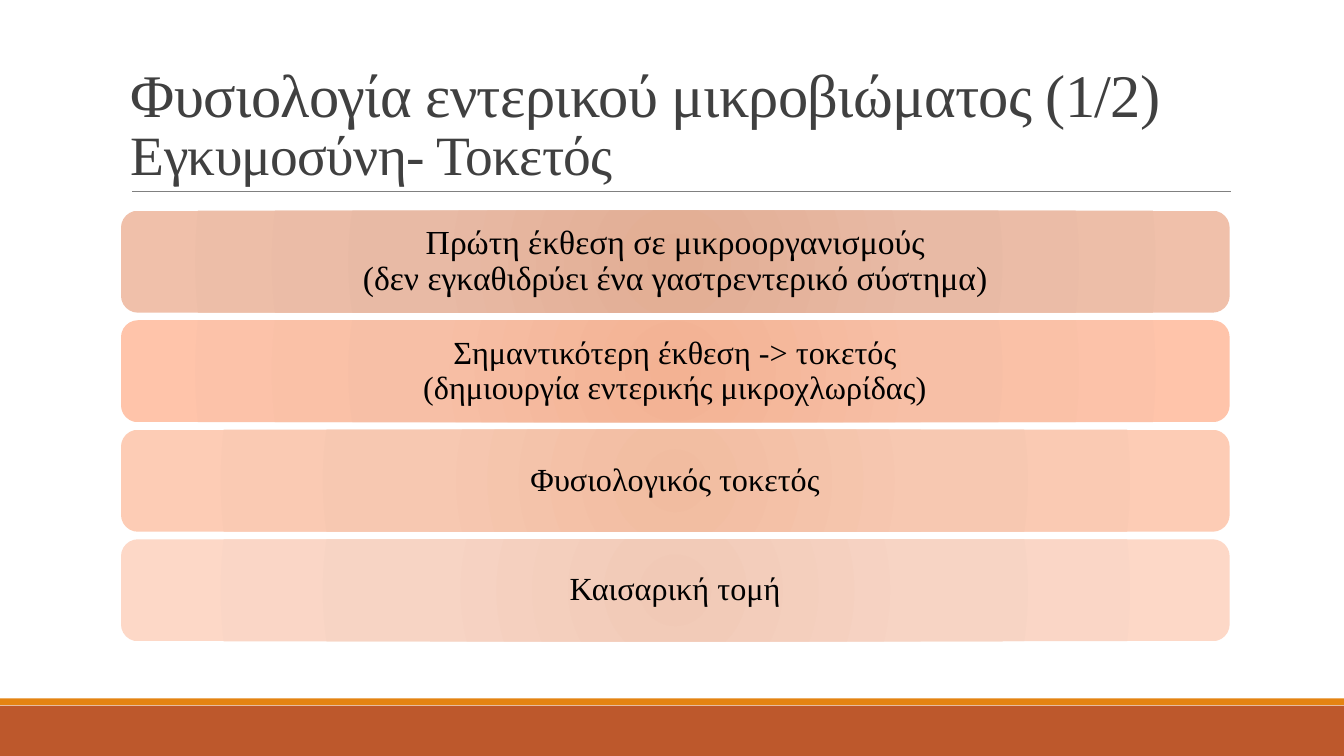
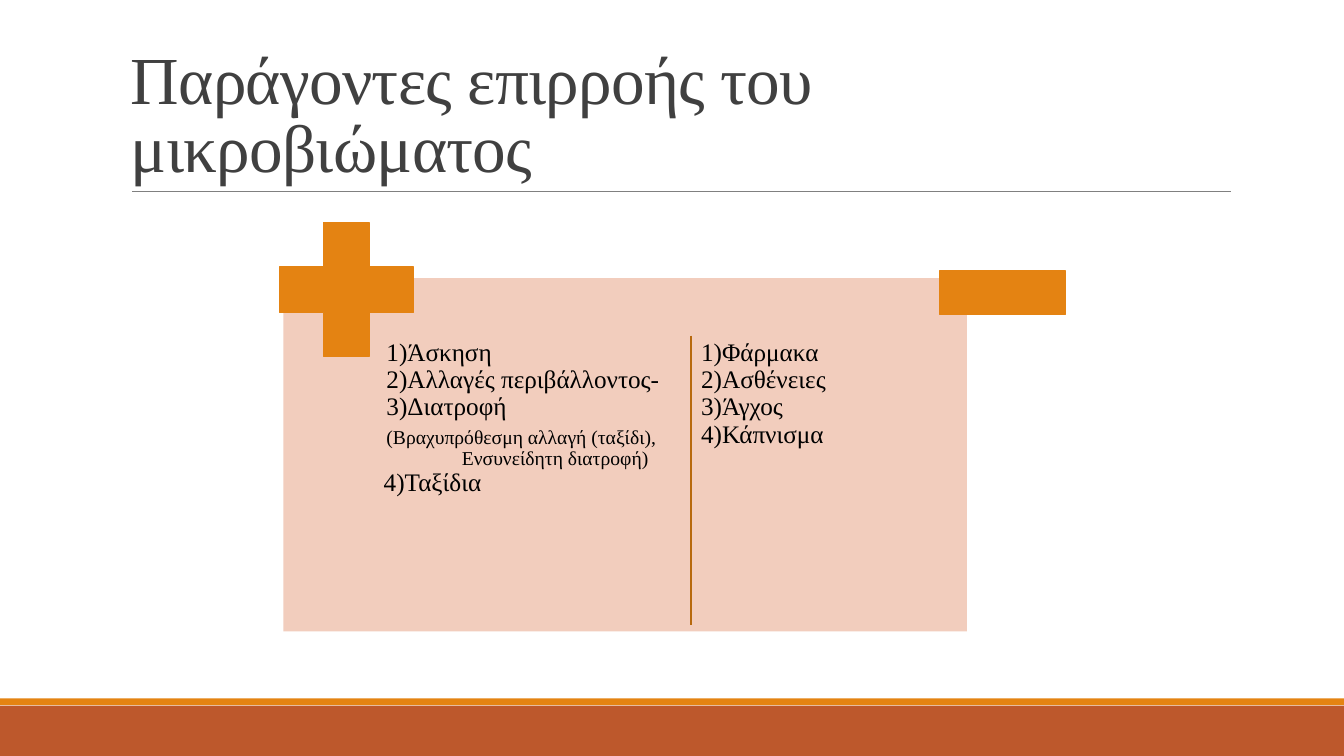
from pptx import Presentation
from pptx.dml.color import RGBColor
from pptx.enum import shapes, text
from pptx.oxml import parse_xml
from pptx.oxml.ns import nsdecls, qn
from pptx.util import Cm, Pt

FONT = "Times New Roman"
BLACK = RGBColor(0x00, 0x00, 0x00)
TITLE_GREY = RGBColor(0x40, 0x40, 0x40)
RULE_GREY = RGBColor(0x80, 0x80, 0x80)
RUST = RGBColor(0xBD, 0x58, 0x2C)
ORANGE = RGBColor(0xE4, 0x83, 0x12)
DARK_ORANGE = RGBColor(0xB7, 0x69, 0x0E)
PEACH = RGBColor(0xF2, 0xCD, 0xBD)

SLIDE_W, SLIDE_H = 33.87, 19.05

# A line of text is (wording, size, left indent in cm, space before in points).
BIRTH_TITLE = [
    ("Φυσιολογία εντερικού μικροβιώματος (1/2)", 43.2, 0, 0),
    ("Εγκυμοσύνη- Τοκετός", 39.6, 0, 0),
]
# Each bar: lines, text size, gradient colours from the centre outwards.
BIRTH_BARS = [
    (["Πρώτη έκθεση σε μικροοργανισμούς",
      "(δεν εγκαθιδρύει ένα γαστρεντερικό σύστημα)"], 24,
     ("E2AD93", "E8BAA5", "F0C0AA")),
    (["Σημαντικότερη έκθεση -> τοκετός",
      "(δημιουργία εντερικής μικροχλωρίδας)"], 23,
     ("F3B293", "F7BFA6", "FFC4AA")),
    (["Φυσιολογικός τοκετός"], 23, ("F1BCA0", "F7C8B1", "FDCCB5")),
    (["Καισαρική τομή"], 23, ("F1C9B6", "F7D4C4", "FDD8C7")),
]

FACTORS_TITLE = [("Παράγοντες επιρροής του μικροβιώματος", 48, 0, 0)]
POSITIVE_FACTORS = [
    ("1)Άσκηση", 18, 0.32, 0),
    ("2)Αλλαγές περιβάλλοντος-", 18, 0.32, 0),
    ("3)Διατροφή", 18, 0.32, 0),
    ("(Βραχυπρόθεσμη αλλαγή (ταξίδι),", 14, 0.32, 4.5),
    ("Ενσυνείδητη διατροφή)", 14, 2.22, 0),
    ("4)Ταξίδια", 18, 0.25, 0),
]
NEGATIVE_FACTORS = [
    (factor, 18, 0.32, 0)
    for factor in ("1)Φάρμακα", "2)Ασθένειες", "3)Άγχος", "4)Κάπνισμα")
]


def write_text(shape, lines, *, color=BLACK, align=text.PP_ALIGN.LEFT,
               anchor=text.MSO_ANCHOR.TOP, inset=(0.1, 0.1),
               line_spacing=0.9, tracking=0):
    """Fill a shape with lines; inset is (sides, top and bottom) in cm."""
    frame = shape.text_frame
    frame.word_wrap = True
    frame.vertical_anchor = anchor
    frame.margin_left = frame.margin_right = Cm(inset[0])
    frame.margin_top = frame.margin_bottom = Cm(inset[1])
    for index, (wording, size, indent, before) in enumerate(lines):
        paragraph = frame.add_paragraph() if index else frame.paragraphs[0]
        paragraph.alignment = align
        paragraph.line_spacing = line_spacing
        paragraph.space_before = Pt(before)
        if indent:
            paragraph._p.get_or_add_pPr().set("marL", str(Cm(indent)))
        run = paragraph.add_run()
        run.text = wording
        run.font.name = FONT
        run.font.size = Pt(size)
        run.font.color.rgb = color
        if tracking:
            run._r.get_or_add_rPr().set("spc", str(int(tracking * 100)))


def add_box(slide, kind, left, top, width, height, fill=None, outline=None):
    box = slide.shapes.add_shape(kind, Cm(left), Cm(top), Cm(width), Cm(height))
    box.shadow.inherit = False
    if fill is None:
        box.fill.background()
    else:
        box.fill.solid()
        box.fill.fore_color.rgb = fill
    if outline is None:
        box.line.fill.background()
    else:
        box.line.color.rgb = outline
        box.line.width = Pt(1)
    return box


def add_text(slide, lines, left, top, width, height, **style):
    box = slide.shapes.add_textbox(Cm(left), Cm(top), Cm(width), Cm(height))
    write_text(box, lines, **style)


def add_rule(slide, x1, y1, x2, y2, color, width):
    rule = slide.shapes.add_connector(
        shapes.MSO_CONNECTOR.STRAIGHT, Cm(x1), Cm(y1), Cm(x2), Cm(y2))
    rule.line.color.rgb = color
    rule.line.width = Pt(width)
    rule._element.spPr.append(parse_xml(f"<a:effectLst {nsdecls('a')}/>"))


def set_radial_gradient(shape, colors):
    """Replace the empty fill of a shape by a circular gradient."""
    stops = "".join(
        f'<a:gs pos="{position * 1000}"><a:srgbClr val="{color}"/></a:gs>'
        for position, color in zip((0, 45, 100), colors))
    gradient = parse_xml(
        f'<a:gradFill {nsdecls("a")} rotWithShape="1"><a:gsLst>{stops}</a:gsLst>'
        '<a:path path="circle"><a:fillToRect l="100000" t="100000" '
        'r="100000" b="100000"/></a:path></a:gradFill>')
    properties = shape._element.spPr
    properties.replace(properties.find(qn("a:noFill")), gradient)


def add_titled_slide(deck, title):
    slide = deck.slides.add_slide(deck.slide_layouts[6])
    rectangle = shapes.MSO_SHAPE.RECTANGLE
    add_box(slide, rectangle, 0, 17.78, SLIDE_W, 1.27, RUST)
    add_box(slide, rectangle, 0, 17.6, SLIDE_W, 0.17, ORANGE)
    add_rule(slide, 3.33, 4.82, 31.01, 4.82, RULE_GREY, 0.5)
    add_text(slide, title, 3.05, 0.79, 27.94, 4.04, color=TITLE_GREY,
             anchor=text.MSO_ANCHOR.BOTTOM, inset=(0.25, 0.13),
             line_spacing=0.85, tracking=-0.5)
    return slide


def build_birth_slide(deck):
    slide = add_titled_slide(deck, BIRTH_TITLE)
    first_top, height, pitch = 5.31, 2.57, 2.76
    for row, (wordings, size, colors) in enumerate(BIRTH_BARS):
        bar = add_box(slide, shapes.MSO_SHAPE.ROUNDED_RECTANGLE,
                      3.05, first_top + row * pitch, 27.94, height)
        set_radial_gradient(bar, colors)
        write_text(bar, [(wording, size, 0, 0) for wording in wordings],
                   align=text.PP_ALIGN.CENTER, anchor=text.MSO_ANCHOR.MIDDLE,
                   inset=(0.25, 0.25))


def build_factors_slide(deck):
    slide = add_titled_slide(deck, FACTORS_TITLE)
    rectangle = shapes.MSO_SHAPE.RECTANGLE
    list_top = 8.46
    add_box(slide, rectangle, 7.14, 7.01, 17.23, 8.9, PEACH)
    for left, factors in ((9.32, POSITIVE_FACTORS), (17.25, NEGATIVE_FACTORS)):
        add_text(slide, factors, left, list_top, 8, 7.62)
    plus = add_box(slide, shapes.MSO_SHAPE.CROSS,
                   7.04, 5.61, 3.38, 3.38, ORANGE, ORANGE)
    plus.adjustments[0] = 0.33
    add_box(slide, rectangle, 23.67, 6.83, 3.18, 1.09, ORANGE, ORANGE)
    add_rule(slide, 17.42, list_top, 17.42, 15.75, DARK_ORANGE, 1.25)


def main():
    deck = Presentation()
    deck.slide_width, deck.slide_height = Cm(SLIDE_W), Cm(SLIDE_H)
    build_birth_slide(deck)
    build_factors_slide(deck)
    deck.save("out.pptx")


if __name__ == "__main__":
    main()
